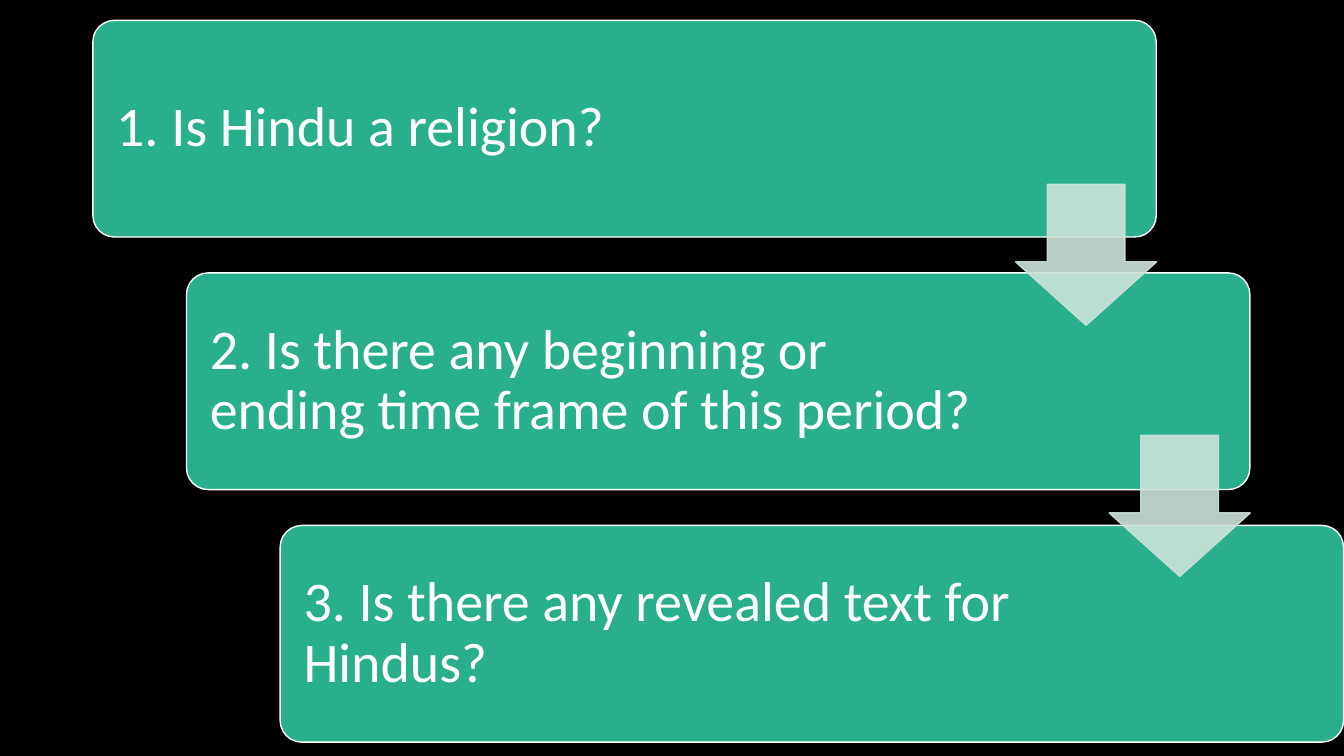
from lxml import etree
from pptx import Presentation
from pptx.dml.color import RGBColor
from pptx.enum import shapes, text
from pptx.oxml import ns
from pptx.util import Pt

BLACK = RGBColor(0x00, 0x00, 0x00)
WHITE = RGBColor(0xFF, 0xFF, 0xFF)
GREEN = RGBColor(0x29, 0xAF, 0x8C)
MINT = RGBColor(0xCD, 0xE3, 0xDA)

LEFT, TOP = 66.3, 14.5
STEP_X, STEP_Y = 66.9, 180.4
BOX_W, BOX_H = 759.6, 154.8
PAD = 4.5
ARROW_LEFT, ARROW_TOP, ARROW_SIZE = 725.4, 131.6, 100.8

QUESTIONS = [
    ("1. Is Hindu a religion?", 593.3),
    ("2. Is there any beginning or ending time frame of this period?", 583),
    ("3. Is there any revealed text for Hindus?", 583),
]
INSET = Pt(12.2)
FRAME = {
    "word_wrap": True,
    "vertical_anchor": text.MSO_ANCHOR.MIDDLE,
    "margin_left": INSET,
    "margin_top": INSET,
    "margin_right": INSET,
    "margin_bottom": INSET,
}
PARAGRAPH = {"alignment": text.PP_ALIGN.LEFT, "line_spacing": 0.9}
FONT = {"name": "Calibri", "size": Pt(40)}


def set_all(target, values):
    for name, value in values.items():
        setattr(target, name, value)


def add_preset(s, kind, x, y, w, h, adjustments, fill, line):
    sp = s.shapes.add_shape(kind, Pt(x), Pt(y), Pt(w), Pt(h))
    sp.shadow.inherit = False
    for i, value in enumerate(adjustments):
        sp.adjustments[i] = value
    sp.fill.solid()
    sp.fill.fore_color.rgb = fill
    sp.line.color.rgb = line
    sp.line.width = Pt(1)
    return sp


def add_box(s, x, y):
    add_preset(s, shapes.MSO_SHAPE.ROUNDED_RECTANGLE, x, y, BOX_W, BOX_H,
               [0.1], GREEN, WHITE)


def add_question(s, x, y, w, words):
    sp = s.shapes.add_textbox(Pt(x + PAD), Pt(y + PAD), Pt(w), Pt(BOX_H - 2 * PAD))
    tf = sp.text_frame
    set_all(tf, FRAME)
    p = tf.paragraphs[0]
    set_all(p, PARAGRAPH)
    r = p.add_run()
    r.text = words
    set_all(r.font, FONT)
    r.font.color.rgb = WHITE


def add_arrow(s, x, y):
    sp = add_preset(s, shapes.MSO_SHAPE.DOWN_ARROW, x, y, ARROW_SIZE, ARROW_SIZE,
                    [0.55, 0.45], MINT, MINT)
    for color in sp.element.spPr.iter(ns.qn("a:srgbClr")):
        etree.SubElement(color, ns.qn("a:alpha"), val="90000")


def main():
    prs = Presentation()
    set_all(prs, {"slide_width": Pt(960), "slide_height": Pt(540)})
    s = prs.slides.add_slide(prs.slide_layouts[6])
    s.background.fill.solid()
    s.background.fill.fore_color.rgb = BLACK

    for i, (words, width) in enumerate(QUESTIONS):
        x, y = LEFT + i * STEP_X, TOP + i * STEP_Y
        add_box(s, x, y)
        add_question(s, x, y, width, words)
    for i in range(len(QUESTIONS) - 1):
        add_arrow(s, ARROW_LEFT + i * STEP_X, ARROW_TOP + i * (STEP_Y - 1))

    prs.save("out.pptx")


if __name__ == "__main__":
    main()
